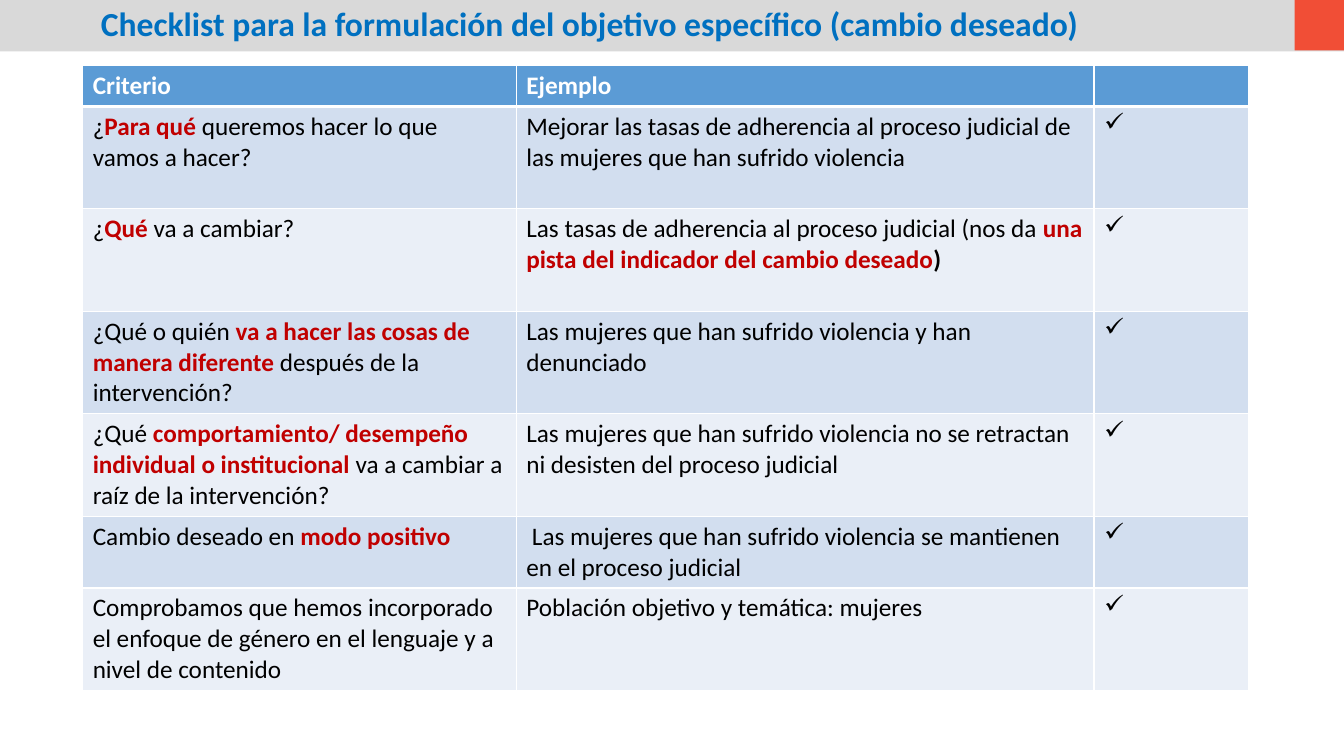
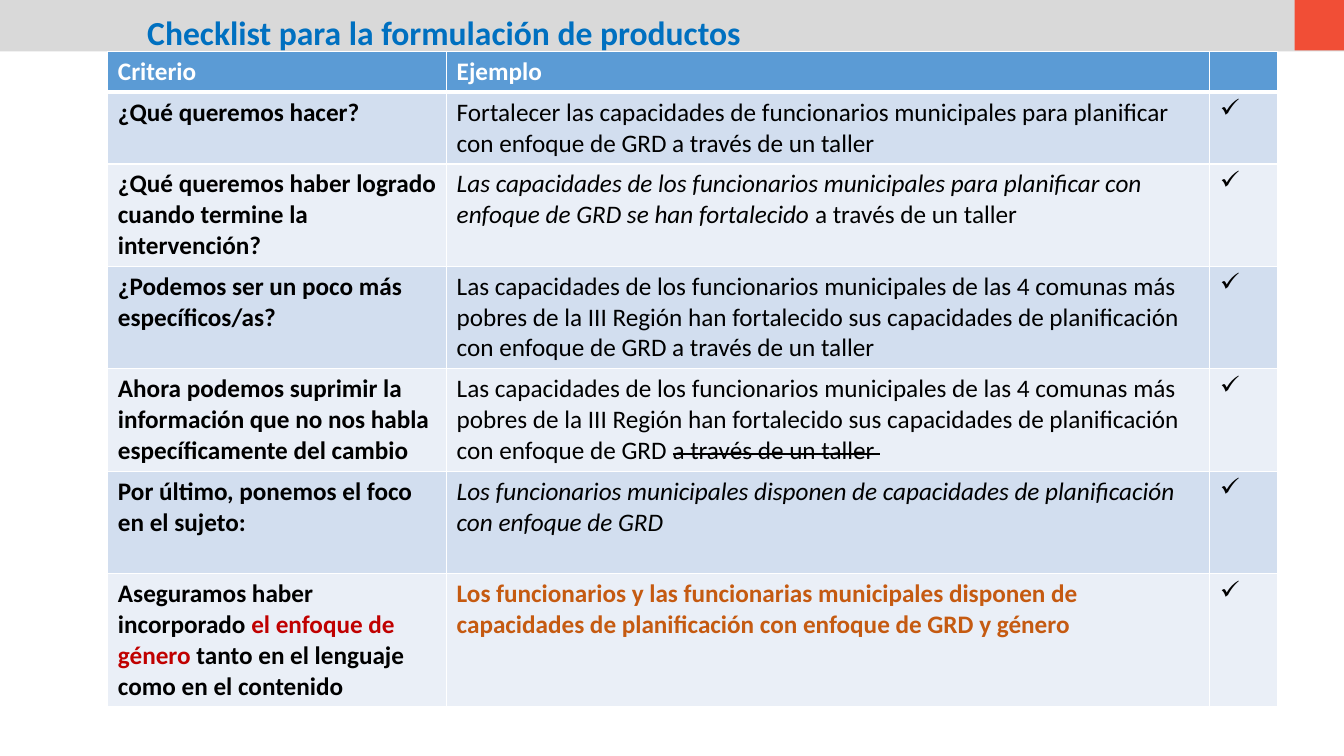
"""Build two checklist slides: one for the specific objective, one for products."""
import lxml.etree
import pptx
import pptx.dml.color
import pptx.enum.shapes
import pptx.enum.text
import pptx.oxml
import pptx.oxml.ns
import pptx.util

Inches, Pt = pptx.util.Inches, pptx.util.Pt
RGBColor = pptx.dml.color.RGBColor

WHITE = RGBColor(0xFF, 0xFF, 0xFF)
BLACK = RGBColor(0x00, 0x00, 0x00)
BAND_GREY = RGBColor(0xD9, 0xD9, 0xD9)
CORNER_RED = RGBColor(0xF1, 0x4E, 0x36)
TITLE_BLUE = RGBColor(0x00, 0x70, 0xC0)
HEADER_BLUE = RGBColor(0x5B, 0x9B, 0xD5)
ROW_TINTS = (RGBColor(0xD2, 0xDE, 0xEF), RGBColor(0xEA, 0xEF, 0xF7))
KEY_RED = RGBColor(0xC0, 0x00, 0x00)
FINAL_ORANGE = RGBColor(0xC5, 0x5A, 0x11)

FONT = "Calibri"
BAND_HEIGHT = 0.51
LINE_POINTS = 22
PADDING_POINTS = 7.2

PLAIN = {}
BOLD = {"bold": True}
ITALIC = {"italic": True}
KEY = {"bold": True, "color": KEY_RED}
FINAL = {"bold": True, "color": FINAL_ORANGE}
STRUCK = {"strike": True}

HEADER = ("Criterio", "Ejemplo", "")
COMUNAS = (
    "Las capacidades de los funcionarios municipales de las 4 comunas más pobres de la "
    "III Región han fortalecido sus capacidades de planificación con enfoque de GRD "
)

checklists = [
    {
        "title": "Checklist para la formulación del objetivo específico (cambio deseado)",
        "title_box": (0.81, 0.06, 11.14, 0.45),
        "table_corner": (0.82, 0.65),
        "columns": (4.3, 5.73, 1.53),
        "row_lines": (1, 3, 3, 3, 3, 2, 3),
        "bold_criteria": False,
        "rows": [
            ([("¿", PLAIN), ("Para qué ", KEY), ("queremos hacer lo que vamos a hacer?", PLAIN)],
             "Mejorar las tasas de adherencia al proceso judicial de las mujeres "
             "que han sufrido violencia"),
            ([("¿", PLAIN), ("Qué", KEY), (" va a cambiar?", PLAIN)],
             [("Las tasas de adherencia al proceso judicial (nos da ", PLAIN),
              ("una pista del indicador del cambio deseado", KEY), (")", BOLD)]),
            ([("¿Qué o quién ", PLAIN), ("va a hacer las cosas de manera diferente ", KEY),
              ("después de la intervención?", PLAIN)],
             "Las mujeres que han sufrido violencia y han denunciado"),
            ([("¿Qué ", PLAIN), ("comportamiento/ desempeño individual o institucional ", KEY),
              ("va a cambiar a raíz de la intervención?", PLAIN)],
             "Las mujeres que han sufrido violencia no se retractan ni desisten "
             "del proceso judicial"),
            ([("Cambio deseado en ", PLAIN), ("modo positivo", KEY)],
             " Las mujeres que han sufrido violencia se mantienen en el proceso judicial"),
            ("Comprobamos que hemos incorporado el enfoque de género en el lenguaje "
             "y a nivel de contenido",
             "Población objetivo y temática: mujeres"),
        ],
    },
    {
        "title": "Checklist para la formulación de productos",
        "title_box": (1.27, 0.15, 9.17, 0.68),
        "table_corner": (1.07, BAND_HEIGHT),
        "columns": (3.36, 7.57, 0.67),
        "row_lines": (1, 2, 3, 3, 3, 3, 4),
        "bold_criteria": True,
        "rows": [
            ("¿Qué queremos hacer?",
             "Fortalecer las capacidades de funcionarios municipales para planificar "
             "con enfoque de GRD a través de un taller"),
            ("¿Qué queremos haber logrado cuando termine la intervención?",
             [("Las capacidades de los funcionarios municipales para planificar con enfoque "
               "de GRD se han fortalecido ", ITALIC), ("a través de un taller", PLAIN)]),
            ("¿Podemos ser un poco más específicos/as?",
             COMUNAS + "a través de un taller"),
            ("Ahora podemos suprimir la información que no nos habla específicamente del cambio",
             [(COMUNAS, PLAIN), ("a través de un taller ", STRUCK)]),
            ("Por último, ponemos el foco en el sujeto:",
             [("Los funcionarios municipales disponen de capacidades de planificación "
               "con enfoque de GRD", ITALIC)]),
            ([("Aseguramos haber incorporado ", PLAIN), ("el enfoque de género ", KEY),
              ("tanto en el lenguaje como en el contenido", PLAIN)],
             [("Los funcionarios y las funcionarias municipales disponen de capacidades de "
               "planificación con enfoque de GRD y género", FINAL)]),
        ],
    },
]


def style_paragraph(paragraph, size, color, bold):
    font = paragraph.font
    font.name, font.size, font.bold = FONT, Pt(size), bold
    font.color.rgb = color


def fill_cell(cell, content, tint, color, bold):
    cell.fill.solid()
    cell.fill.fore_color.rgb = tint
    paragraph = cell.text_frame.paragraphs[0]
    if content == " ":
        properties = paragraph._p.get_or_add_pPr()
        properties.set("marL", str(Inches(0.31)))
        properties.set("indent", str(-Inches(0.31)))
        for tag, name, value in (("a:buFont", "typeface", "Wingdings"), ("a:buChar", "char", "ü")):
            lxml.etree.SubElement(properties, pptx.oxml.ns.qn(tag)).set(name, value)
    style_paragraph(paragraph, 18, color, bold)
    pieces = [(content, PLAIN)] if isinstance(content, str) else content
    for text, look in pieces:
        if not text:
            continue
        run = paragraph.add_run()
        run.text = text
        run.font.bold = look.get("bold", bold)
        run.font.color.rgb = look.get("color", color)
        if "italic" in look:
            run.font.italic = True
        if "strike" in look:
            run.font._element.set("strike", "sngStrike")


deck = pptx.Presentation()
deck.slide_width, deck.slide_height = Inches(13.33), Inches(7.5)
layout = deck.slide_layouts[5]

for number, checklist in enumerate(checklists):
    slide = deck.slides.add_slide(layout)

    if number == 0:
        bands = [((0, 0, 13.33, BAND_HEIGHT), BAND_GREY), ((12.84, 0, 0.5, 0.5), CORNER_RED)]
        for depth, (box, color) in enumerate(bands):
            band = slide.shapes.add_shape(
                pptx.enum.shapes.MSO_SHAPE.RECTANGLE, *map(Inches, box))
            band.shadow.inherit = False
            band.fill.solid()
            band.fill.fore_color.rgb = color
            band.line.fill.background()
            layout.shapes.element.insert(2 + depth, band.element)

    title = slide.shapes.title
    title.left, title.top, title.width, title.height = map(Inches, checklist["title_box"])
    heading = title.text_frame
    heading.text = checklist["title"]
    heading.word_wrap = True
    heading.auto_size = pptx.enum.text.MSO_AUTO_SIZE.NONE
    heading.vertical_anchor = pptx.enum.text.MSO_ANCHOR.TOP
    heading.margin_left = Inches(0.19)
    heading.paragraphs[0].alignment = pptx.enum.text.PP_ALIGN.LEFT
    heading.paragraphs[0].line_spacing = 0.8
    style_paragraph(heading.paragraphs[0], 24, TITLE_BLUE, True)

    columns = checklist["columns"]
    heights = [PADDING_POINTS + LINE_POINTS * lines for lines in checklist["row_lines"]]
    left, top = checklist["table_corner"]
    criteria = slide.shapes.add_table(
        len(heights), len(columns), Inches(left), Inches(top),
        Inches(sum(columns)), Pt(sum(heights))).table
    for column, width in zip(criteria.columns, columns):
        column.width = Inches(width)
    for row, height in zip(criteria.rows, heights):
        row.height = Pt(height)

    for c, label in enumerate(HEADER):
        cell = criteria.cell(0, c)
        fill_cell(cell, label, HEADER_BLUE, WHITE, True)
        rule = pptx.oxml.parse_xml(
            f'<a:lnB {pptx.oxml.ns.nsdecls("a")} w="{Pt(3)}"><a:solidFill>'
            f'<a:srgbClr val="{WHITE}"/></a:solidFill></a:lnB>')
        cell._tc.get_or_add_tcPr().insert(0, rule)
    for r, (criterion, example) in enumerate(checklist["rows"]):
        for c, content in enumerate((criterion, example, " ")):
            bold = checklist["bold_criteria"] and c == 0
            fill_cell(criteria.cell(r + 1, c), content, ROW_TINTS[r % 2], BLACK, bold)

deck.save("out.pptx")
